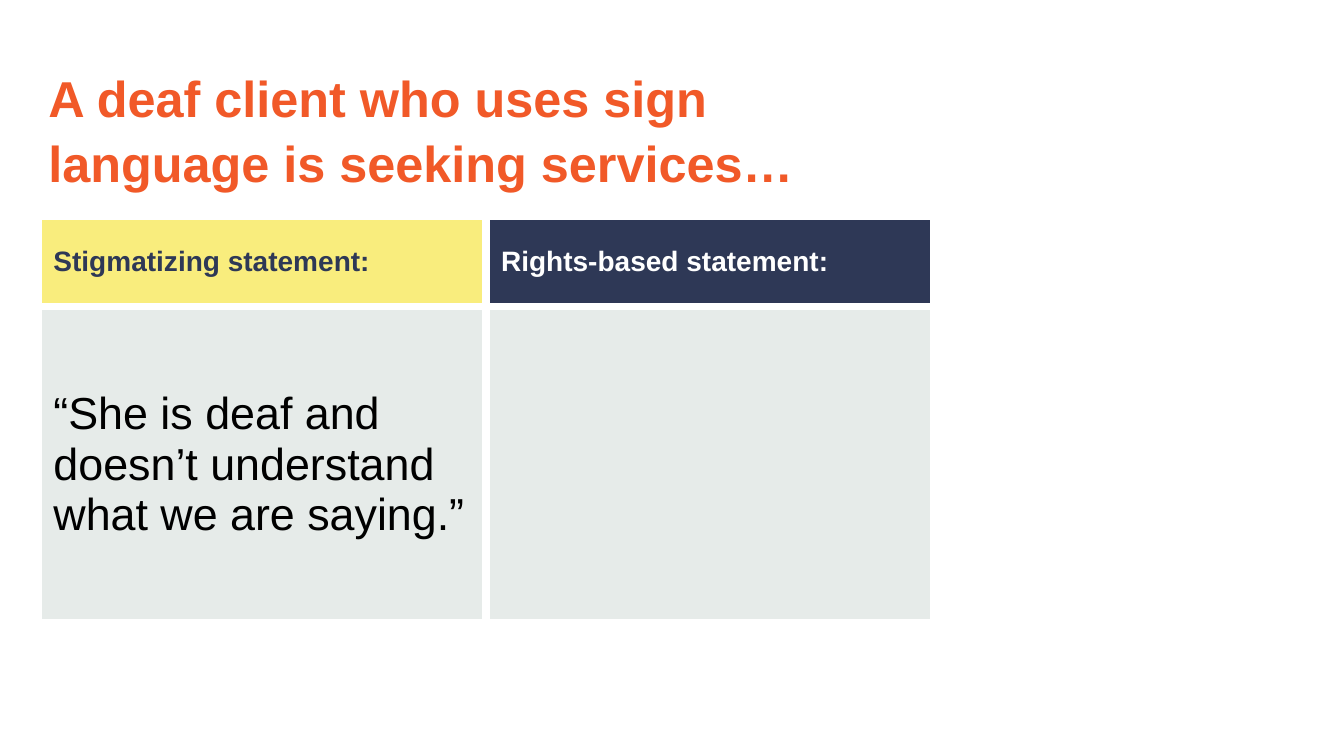
from pptx import Presentation
from pptx.dml.color import RGBColor
from pptx.enum.text import MSO_ANCHOR, PP_ALIGN
from pptx.oxml import parse_xml
from pptx.oxml.ns import nsdecls
from pptx.util import Inches, Pt

ORANGE = RGBColor(0xF1, 0x59, 0x28)
YELLOW = RGBColor(0xF9, 0xED, 0x7D)
NAVY = RGBColor(0x2E, 0x38, 0x56)
GREY = RGBColor(0xE6, 0xEB, 0xE9)
WHITE = RGBColor(0xFF, 0xFF, 0xFF)
BLACK = RGBColor(0, 0, 0)


def write_text(para, text, size, color, bold=True):
    para.alignment = PP_ALIGN.LEFT
    span = para.add_run()
    span.text = text
    span.font.name = "Arial"
    span.font.size = Pt(size)
    span.font.bold = bold
    span.font.color.rgb = color


deck = Presentation()
deck.slide_width = Inches(13.33)
deck.slide_height = Inches(7.5)
page = deck.slides.add_slide(deck.slide_layouts[5])

title = page.shapes.title
title.left, title.top = Inches(0.38), Inches(0.54)
title.width, title.height = Inches(8.53), Inches(1.45)
frame = title.text_frame
frame.word_wrap = True
frame.vertical_anchor = MSO_ANCHOR.MIDDLE
frame.margin_left = frame.margin_right = Inches(0.1)
frame.margin_top = frame.margin_bottom = Inches(0.1)
frame.paragraphs[0].line_spacing = 1.07
write_text(
    frame.paragraphs[0],
    "A deaf client who uses sign language is seeking services…",
    size=36,
    color=ORANGE,
)

table = page.shapes.add_table(
    2, 2, Inches(0.38), Inches(2.15), Inches(8.88), Inches(4.03)
).table
table.horz_banding = False
for column in table.columns:
    column.width = Inches(4.44)
table.rows[0].height = Inches(0.89)
table.rows[1].height = Inches(3.14)

for cell, fill in zip(table.iter_cells(), (YELLOW, NAVY, GREY, GREY)):
    cell.vertical_anchor = MSO_ANCHOR.MIDDLE
    cell.margin_left = cell.margin_right = Inches(0.15)
    cell.margin_top = cell.margin_bottom = Inches(0.15)
    cell.fill.solid()
    cell.fill.fore_color.rgb = fill
    for position, side in enumerate(("lnL", "lnR", "lnT", "lnB")):
        border = parse_xml(
            f'<a:{side} {nsdecls("a")} w="{Pt(6)}"><a:solidFill>'
            f'<a:srgbClr val="{WHITE}"/></a:solidFill></a:{side}>'
        )
        cell._tc.get_or_add_tcPr().insert(position, border)

write_text(
    table.cell(0, 0).text_frame.paragraphs[0],
    "Stigmatizing statement:",
    size=20,
    color=NAVY,
)
write_text(
    table.cell(0, 1).text_frame.paragraphs[0],
    "Rights-based statement:",
    size=20,
    color=WHITE,
)
write_text(
    table.cell(1, 0).text_frame.paragraphs[0],
    "“She is deaf and doesn’t understand what we are saying.”",
    size=32,
    color=BLACK,
    bold=False,
)

deck.save("out.pptx")
